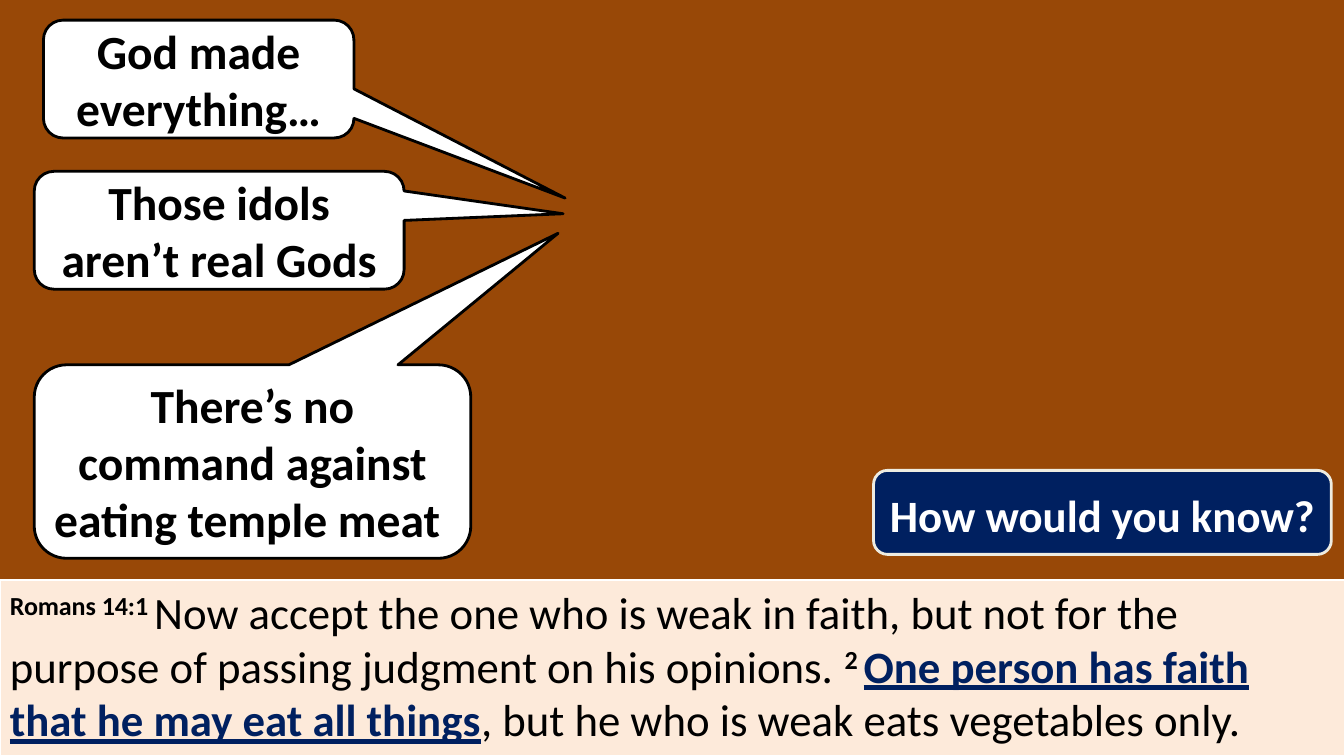
from dataclasses import dataclass

import pptx
import pptx.dml.color
import pptx.enum.shapes
import pptx.enum.text
import pptx.slide
import pptx.text.text
import pptx.util

Pt = pptx.util.Pt
RGBColor = pptx.dml.color.RGBColor
MSO_SHAPE = pptx.enum.shapes.MSO_SHAPE
MSO_ANCHOR = pptx.enum.text.MSO_ANCHOR
PP_ALIGN = pptx.enum.text.PP_ALIGN

BROWN = RGBColor(0x98, 0x48, 0x07)
CREAM = RGBColor(0xFD, 0xEA, 0xDA)
NAVY = RGBColor(0x00, 0x20, 0x60)
IVORY = RGBColor(0xEE, 0xEC, 0xE1)
WHITE = RGBColor(0xFF, 0xFF, 0xFF)
BLACK = RGBColor(0x00, 0x00, 0x00)


@dataclass
class Box:
    left: float
    top: float
    width: float
    height: float
    fill: RGBColor = WHITE
    line: RGBColor = BLACK
    line_width: float = 2


@dataclass
class Callout:
    text: str
    box: Box
    tip: tuple[float, float]
    size: float = 34
    color: RGBColor = BLACK
    spacing: float = 1.0


@dataclass
class VersePart:
    text: str
    bold: bool = False
    superscript: bool = False
    underline: bool = False
    color: RGBColor = BLACK


VERSE_BOX = Box(0, 414, 961.2, 126, CREAM, WHITE, 1.5)
VERSE = [
    VersePart("Romans 14:1 ", bold=True, superscript=True),
    VersePart("Now accept the one who is weak in faith, but not for the "
              "purpose of passing judgment on his opinions. "),
    VersePart("2 ", bold=True, superscript=True),
    VersePart("One person has faith that he may eat all things",
              bold=True, underline=True, color=NAVY),
    VersePart(", but he who is weak eats vegetables only."),
]

CALLOUTS = [
    Callout("How would you know?", Box(624, 336, 327, 60, NAVY, IVORY),
            (-0.22, 0.5), 32, WHITE, 1.07),
    Callout("God made everything…", Box(31, 14.4, 221.8, 84.2), (1.18, 1.01)),
    Callout("Those idols aren’t real Gods", Box(24.5, 122.4, 264.2, 84.2),
            (0.93, -0.14)),
    Callout("There’s no command against eating temple meat ",
            Box(24.5, 260.6, 311.8, 138.2), (0.7, -1.18)),
]


def add_box(s: pptx.slide.Slide, kind: MSO_SHAPE, box: Box):
    sp = s.shapes.add_shape(kind, Pt(box.left), Pt(box.top),
                            Pt(box.width), Pt(box.height))
    sp.shadow.inherit = False
    sp.fill.solid()
    sp.fill.fore_color.rgb = box.fill
    sp.line.color.rgb = box.line
    sp.line.width = Pt(box.line_width)
    sp.text_frame.word_wrap = True
    return sp


def format_run(r: pptx.text.text._Run, size: float, color: RGBColor,
               bold: bool) -> None:
    r.font.name = "Calibri"
    r.font.size = Pt(size)
    r.font.color.rgb = color
    r.font.bold = bold


def add_callout(s: pptx.slide.Slide, callout: Callout) -> None:
    sp = add_box(s, MSO_SHAPE.ROUNDED_RECTANGULAR_CALLOUT, callout.box)
    sp.adjustments[0], sp.adjustments[1] = callout.tip
    tf = sp.text_frame
    tf.vertical_anchor = MSO_ANCHOR.MIDDLE
    tf.text = callout.text
    p = tf.paragraphs[0]
    p.alignment = PP_ALIGN.CENTER
    p.line_spacing = callout.spacing
    format_run(p.runs[0], callout.size, callout.color, True)


def add_verse(s: pptx.slide.Slide, box: Box, parts: list[VersePart]) -> None:
    tf = add_box(s, MSO_SHAPE.RECTANGLE, box).text_frame
    tf.vertical_anchor = MSO_ANCHOR.TOP
    p = tf.paragraphs[0]
    p.alignment = PP_ALIGN.LEFT
    for part in parts:
        r = p.add_run()
        r.text = part.text
        format_run(r, 32, part.color, part.bold)
        r.font.underline = part.underline
        if part.superscript:
            r.font._element.set("baseline", "30000")


def main() -> None:
    prs = pptx.Presentation()
    prs.slide_width, prs.slide_height = Pt(960), Pt(540)
    s = prs.slides.add_slide(prs.slide_layouts[6])
    s.background.fill.solid()
    s.background.fill.fore_color.rgb = BROWN
    add_verse(s, VERSE_BOX, VERSE)
    for callout in CALLOUTS:
        add_callout(s, callout)
    prs.save("out.pptx")


if __name__ == "__main__":
    main()
